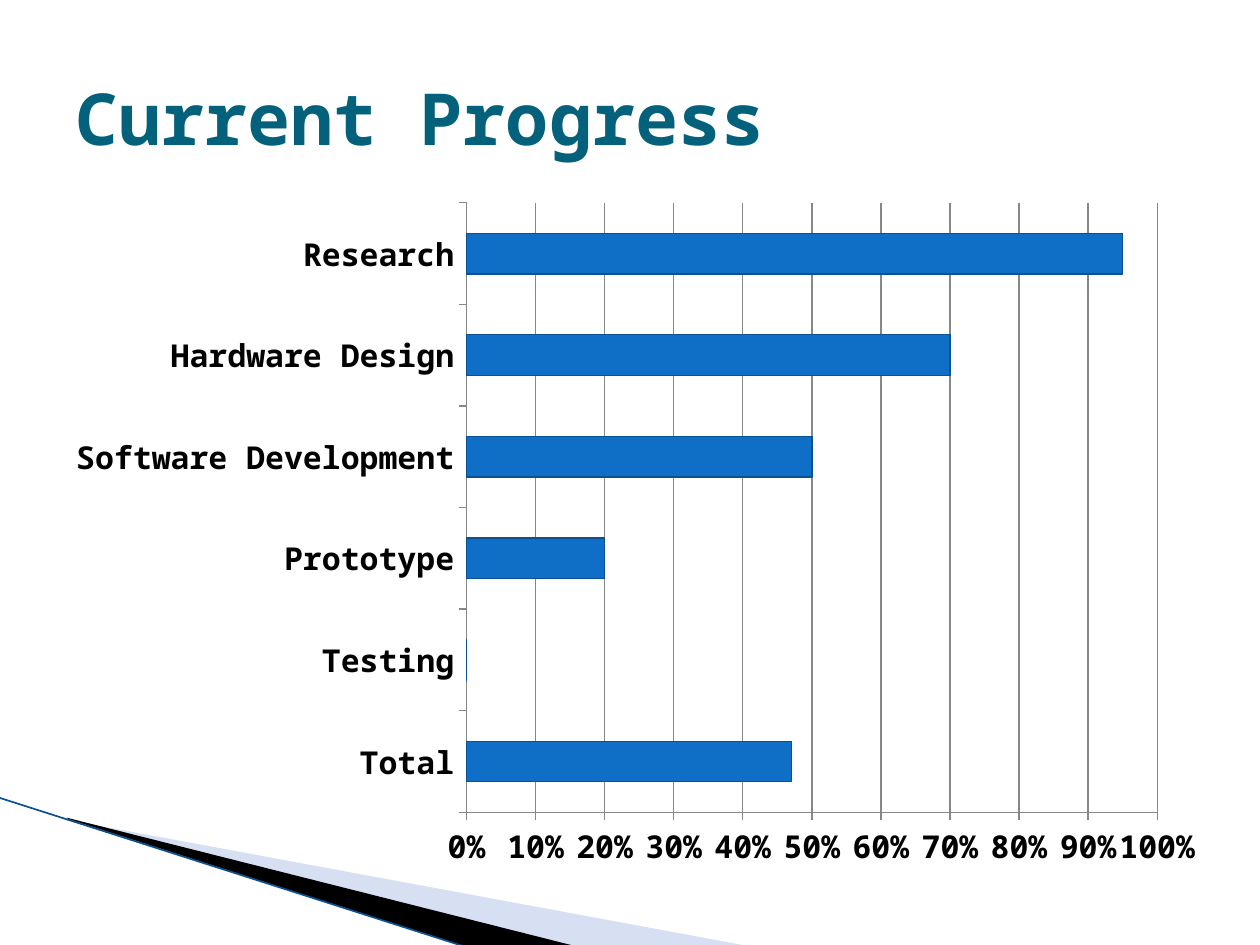
from lxml import etree
from pptx import Presentation
from pptx.chart.data import CategoryChartData
from pptx.dml.color import RGBColor
from pptx.enum.chart import XL_CHART_TYPE, XL_TICK_MARK
from pptx.enum.shapes import MSO_CONNECTOR
from pptx.enum.text import MSO_ANCHOR, PP_ALIGN
from pptx.oxml.ns import qn
from pptx.util import Inches, Pt

BAR_CLUSTERED = XL_CHART_TYPE.BAR_CLUSTERED
TICK_OUTSIDE = XL_TICK_MARK.OUTSIDE
STRAIGHT = MSO_CONNECTOR.STRAIGHT
MIDDLE = MSO_ANCHOR.MIDDLE
LEFT = PP_ALIGN.LEFT

FONT = "Noto Sans Mono"
COLORS = {
    "title": "04617B",
    "text": "000000",
    "bar": "0F6FC6",
    "edge": "0B5091",
    "grid": "878787",
    "pale": "9DB2E1",
    "dark": "000000",
}
PROGRESS = {
    "Total": 0.47,
    "Testing": 0,
    "Prototype": 0.2,
    "Software Development": 0.5,
    "Hardware Design": 0.7,
    "Research": 0.95,
}
PALE_WEDGE = [(0.55, 6.51), (5.95, 7.51), (4.56, 7.51), (0.55, 6.5)]
DARK_WEDGE = [(0.53, 6.49), (4.57, 7.51), (3.72, 7.52), (0.54, 6.5)]


def color(name):
    """Return the named colour."""
    return RGBColor.from_string(COLORS[name])


def style_font(font, size, name):
    """Apply the bold slide typeface at a size and colour."""
    font.name = FONT
    font.size = Pt(size)
    font.bold = True
    font.color.rgb = color(name)


def style_line(line, name, width):
    """Give a line its colour and width in points."""
    line.color.rgb = color(name)
    line.width = Pt(width)


def add_title(page, text):
    """Place and fill the title placeholder."""
    title = page.shapes.title
    title.left, title.top = Inches(0.5), Inches(0.3)
    title.width, title.height = Inches(9), Inches(1.25)
    title.text_frame.vertical_anchor = MIDDLE
    para = title.text_frame.paragraphs[0]
    para.alignment = LEFT
    span = para.add_run()
    span.text = text
    style_font(span.font, 41, "title")


def add_wedge(page, points, name, opacity=100):
    """Draw a filled corner wedge through points in inches."""
    start, *rest = [(Inches(x), Inches(y)) for x, y in points]
    builder = page.shapes.build_freeform(*start)
    builder.add_line_segments(rest, close=True)
    wedge = builder.convert_to_shape()
    wedge.shadow.inherit = False
    wedge.fill.solid()
    wedge.fill.fore_color.rgb = color(name)
    wedge.line.fill.background()
    if opacity < 100:
        tint = wedge.fill._xPr.find(".//" + qn("a:srgbClr"))
        etree.SubElement(tint, qn("a:alpha")).set("val", str(opacity * 1000))


def add_edge(page):
    """Draw the thin diagonal line along the corner wedges."""
    edge = page.shapes.add_connector(
        STRAIGHT, Inches(-0.01), Inches(6.33), Inches(3.71), Inches(7.52))
    style_line(edge.line, "edge", 0.95)
    etree.SubElement(edge._element.spPr, qn("a:effectLst"))


def style_axis(axis):
    """Format the labels, ticks and line of a chart axis."""
    axis.major_tick_mark = TICK_OUTSIDE
    style_font(axis.tick_labels.font, 18, "text")
    style_line(axis.format.line, "grid", 0.75)


def add_progress_chart(page):
    """Add the bar chart of progress by work stage."""
    data = CategoryChartData(number_format="0%")
    data.categories = list(PROGRESS)
    data.add_series("Series 1", list(PROGRESS.values()))
    chart = page.shapes.add_chart(
        BAR_CLUSTERED, Inches(0.42), Inches(1.5), Inches(9.25), Inches(5.5),
        data).chart
    chart.has_legend = False
    chart.has_title = False
    style_font(chart.font, 18, "text")

    plot = chart.plots[0]
    plot.gap_width = 150
    plot.vary_by_categories = False
    bars = plot.series[0].format
    bars.fill.solid()
    bars.fill.fore_color.rgb = color("bar")
    style_line(bars.line, "edge", 0.75)

    style_axis(chart.category_axis)
    chart.category_axis.has_major_gridlines = False
    values = chart.value_axis
    style_axis(values)
    values.minimum_scale, values.maximum_scale = 0, 1
    values.major_unit = 0.1
    values.has_major_gridlines = True
    style_line(values.major_gridlines.format.line, "grid", 0.75)
    values.tick_labels.number_format = "0%"
    values.tick_labels.number_format_is_linked = False


def main():
    """Build and save the progress slide."""
    deck = Presentation()
    deck.slide_width, deck.slide_height = Inches(10), Inches(7.5)
    page = deck.slides.add_slide(deck.slide_layouts[5])
    add_wedge(page, PALE_WEDGE, "pale", 40)
    add_wedge(page, DARK_WEDGE, "dark")
    add_edge(page)
    add_title(page, "Current Progress")
    add_progress_chart(page)
    deck.save("out.pptx")


if __name__ == "__main__":
    main()
